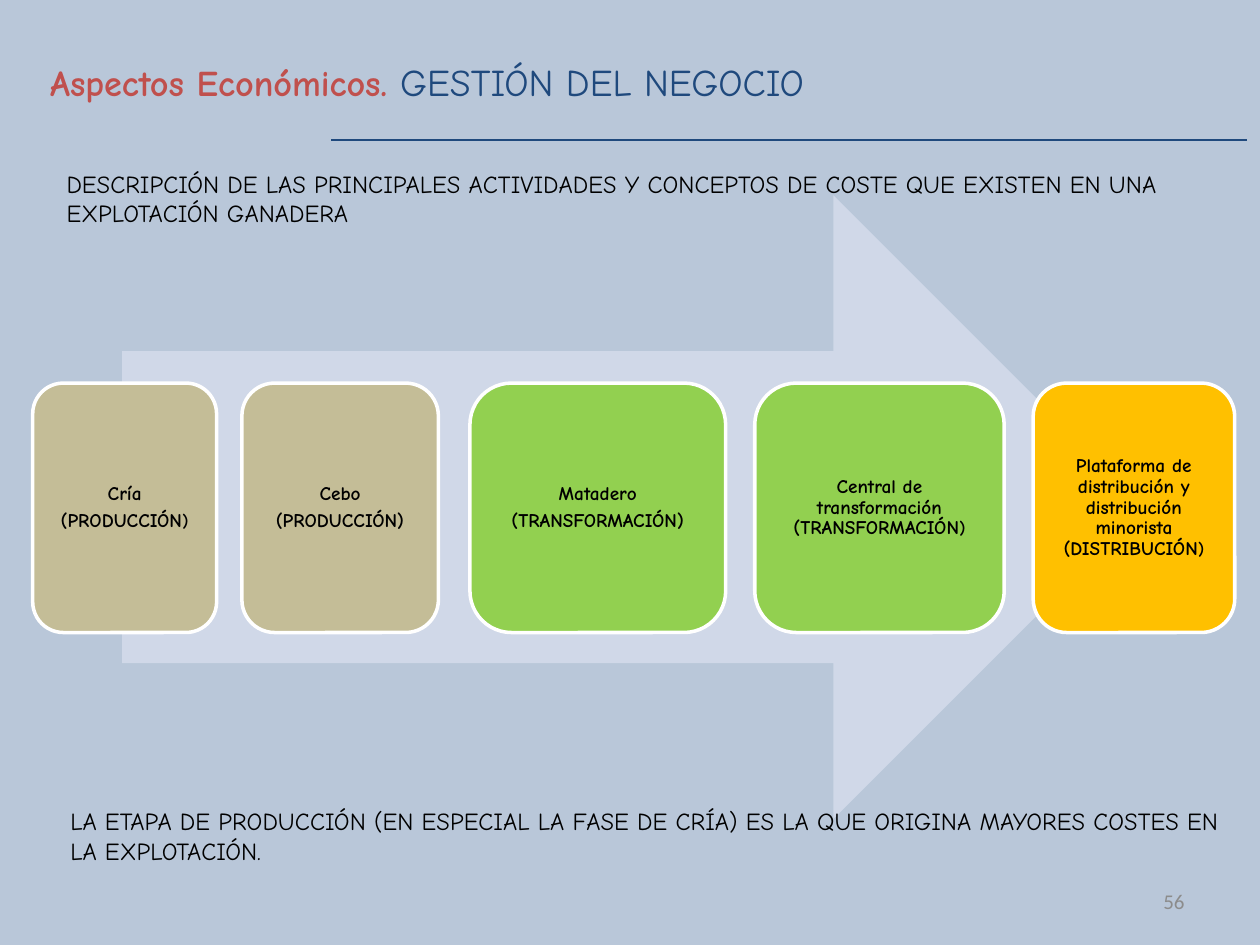
from pptx import Presentation
from pptx.dml.color import RGBColor
from pptx.enum.shapes import MSO_CONNECTOR, MSO_SHAPE
from pptx.enum.text import MSO_ANCHOR, PP_ALIGN
from pptx.oxml.ns import qn
from pptx.util import Inches, Pt
from lxml import etree

ARROW, ROUND = MSO_SHAPE.RIGHT_ARROW, MSO_SHAPE.ROUNDED_RECTANGLE
STRAIGHT = MSO_CONNECTOR.STRAIGHT
TOP, MIDDLE = MSO_ANCHOR.TOP, MSO_ANCHOR.MIDDLE
LEFT, CENTER, RIGHT = PP_ALIGN.LEFT, PP_ALIGN.CENTER, PP_ALIGN.RIGHT

COLORS = {
    "back": "B9C7D9", "arrow": "D0D8E8", "white": "FFFFFF", "black": "000000",
    "tan": "C4BD97", "green": "92D050", "gold": "FFC000",
    "red": "C0504D", "navy": "1F497D", "gray": "8C8C8C",
}
FONT = "Comic Neue"
BODY = {"size": Pt(14), "name": FONT, "color": "black"}
STEP = {"size": Pt(11), "name": FONT, "bold": True, "color": "black"}
SMALL = {**STEP, "size": Pt(10)}
HEAD = {"size": Pt(20.7), "name": FONT, "bold": True, "color": "red"}
TOPIC = {"size": Pt(21.6), "name": FONT, "bold": False, "color": "navy"}
NUMBER = {"size": Pt(12), "name": "Calibri", "color": "gray"}

# Each step: left, width, fill, paragraphs made of (text, format) runs
STEPS = [
    (0.26, 1.46, "tan", [[("Cría", STEP)],
                         [("(PRODUCCIÓN", STEP), (")", SMALL)]]),
    (1.92, 1.56, "tan", [[("Cebo", STEP)], [("(PRODUCCIÓN)", STEP)]]),
    (3.73, 2.03, "green", [[("Matadero", STEP)],
                           [("(TRANSFORMACIÓN)", STEP)]]),
    (5.99, 1.98, "green", [[("Central de transformación (TRANSFORMACIÓN", STEP),
                            (")", SMALL)]]),
    (8.2, 1.6, "gold", [[("Plataforma de distribución y distribución "
                          "minorista (DISTRIBUCIÓN", STEP), (")", SMALL)]]),
]
INTRO = ("DESCRIPCIÓN DE LAS PRINCIPALES ACTIVIDADES Y CONCEPTOS DE COSTE "
         "QUE EXISTEN EN UNA EXPLOTACIÓN GANADERA")
CLOSE = ("LA ETAPA DE PRODUCCIÓN (EN ESPECIAL LA FASE DE CRÍA) ES LA QUE "
         "ORIGINA MAYORES COSTES EN LA EXPLOTACIÓN.")


def rgb(key):
    return RGBColor.from_string(COLORS[key])


def write(frame, paras, align=LEFT, anchor=TOP, **layout):
    frame.word_wrap = True
    frame.vertical_anchor = anchor
    for i, runs in enumerate(paras):
        para = frame.paragraphs[0] if i == 0 else frame.add_paragraph()
        para.alignment = align
        for key, value in layout.items():
            setattr(para, key, value)
        for text, style in runs:
            run = para.add_run()
            run.text = text
            for key, value in style.items():
                if key == "color":
                    run.font.color.rgb = rgb(value)
                else:
                    setattr(run.font, key, value)


def add_text(slide, box, runs, align=LEFT, anchor=TOP):
    area = slide.shapes.add_textbox(*map(Inches, box))
    write(area.text_frame, [runs], align, anchor)


def add_block(slide, kind, box, fill, edge=None):
    block = slide.shapes.add_shape(kind, *map(Inches, box))
    block.shadow.inherit = False
    block.fill.solid()
    block.fill.fore_color.rgb = rgb(fill)
    if edge:
        block.line.color.rgb = rgb(edge)
        block.line.width = Pt(2)
    else:
        block.line.fill.background()
    return block


def add_step(slide, left, width, fill, paras):
    block = add_block(slide, ROUND, (left, 3.04, width, 1.98), fill, "white")
    frame = block.text_frame
    for side in ("left", "right", "top", "bottom"):
        setattr(frame, f"margin_{side}", Inches(0.05))
    write(frame, paras, CENTER, MIDDLE, line_spacing=0.9, space_after=Pt(4))


def add_rule(slide, left, right, y):
    rule = slide.shapes.add_connector(
        STRAIGHT, Inches(left), Inches(y), Inches(right), Inches(y))
    rule.line.color.rgb = rgb("navy")
    rule.line.width = Pt(1.5)
    etree.SubElement(rule._element.spPr, qn("a:effectLst"))


def main():
    deck = Presentation()
    deck.slide_width, deck.slide_height = Inches(10), Inches(7.5)
    slide = deck.slides.add_slide(deck.slide_layouts[6])
    slide.background.fill.solid()
    slide.background.fill.fore_color.rgb = rgb("back")

    # Process arrow with its steps
    add_block(slide, ARROW, (0.97, 1.55, 8.12, 4.95), "arrow")
    for step in STEPS:
        add_step(slide, *step)

    # Text above and below the arrow
    add_text(slide, (0.43, 1.29, 9.37, 0.57), [(INTRO, BODY)])
    add_text(slide, (0.46, 6.35, 9.37, 0.57), [(CLOSE, BODY)])

    # Title, rule and page number
    add_text(slide, (0.3, 0.35, 9.5, 0.6),
             [("Aspectos Económicos. ", HEAD), ("GESTIÓN DEL NEGOCIO", TOPIC)],
             anchor=MIDDLE)
    add_rule(slide, 2.63, 9.9, 1.11)
    add_text(slide, (7.17, 6.95, 2.33, 0.4), [("56", NUMBER)], RIGHT, MIDDLE)

    deck.save("out.pptx")


if __name__ == "__main__":
    main()
